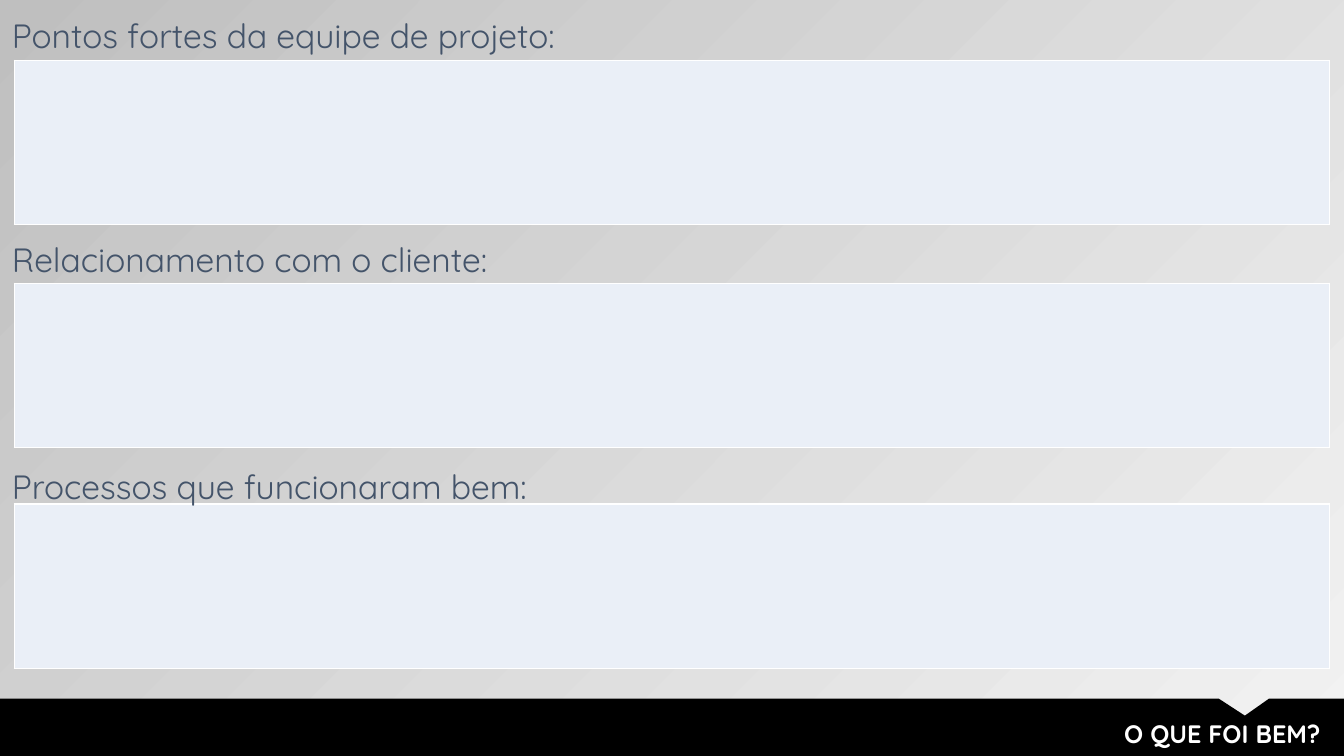
from lxml import etree
from pptx import Presentation
from pptx.dml.color import RGBColor
from pptx.enum.text import MSO_ANCHOR, MSO_AUTO_SIZE, PP_ALIGN
from pptx.oxml.ns import qn
from pptx.util import Pt

TITLE = "O QUE FOI BEM?"
# heading, heading top, heading height, line spacing, answer box top
SECTIONS = [
    ("Pontos fortes da equipe de projeto:", 13.7, 31.7, Pt(21.5), 43.2),
    ("Relacionamento com o cliente:", 173.5, 31.7, Pt(21.5), 202.3),
    ("Processos que funcionaram bem:", 322.6, 41, 1.2, 360),
]
W, H = 960, 540
BAND_TOP = 499
NOTCH = [(870.5, BAND_TOP), (889.2, 511.2), (906.5, BAND_TOP)]
BOX_LEFT, BOX_W, BOX_H = 10.1, 939.6, 117.4
FONT = "Quicksand"
WHITE, BLACK, SLATE, PALE = "FFFFFF", "000000", "44546A", "EAEFF7"
BACKGROUND = ["F2F2F2", "BFBFBF"]


def rgb(value):
    return RGBColor.from_string(value)


def apply(obj, **values):
    for name, value in values.items():
        setattr(obj, name, value)


def write(shape, text, size, color, bold=False, **paragraph):
    tf = shape.text_frame
    apply(tf, word_wrap=True, auto_size=MSO_AUTO_SIZE.NONE,
          vertical_anchor=MSO_ANCHOR.TOP)
    p = tf.paragraphs[0]
    apply(p, **paragraph)
    r = p.add_run()
    r.text = text
    apply(r.font, name=FONT, size=Pt(size), bold=bold)
    r.font.color.rgb = rgb(color)
    return tf


def add_answer_box(s, top):
    frame = s.shapes.add_table(1, 1, Pt(BOX_LEFT), Pt(top), Pt(BOX_W), Pt(BOX_H))
    apply(frame.table, first_row=False, horz_banding=False)
    cell = frame.table.cell(0, 0)
    props = cell._tc.get_or_add_tcPr()
    for side in ("a:lnL", "a:lnR", "a:lnT", "a:lnB"):
        line = etree.SubElement(props, qn(side), w=str(Pt(1)))
        fill = etree.SubElement(line, qn("a:solidFill"))
        etree.SubElement(fill, qn("a:srgbClr"), val=WHITE)
    cell.fill.solid()
    cell.fill.fore_color.rgb = rgb(PALE)


def add_heading(s, text, top, height, spacing):
    box = s.shapes.add_textbox(0, Pt(top), Pt(549.4), Pt(height))
    tf = write(box, text, 24, SLATE, line_spacing=spacing, space_before=Pt(4.8))
    apply(tf, margin_left=Pt(8.6), margin_right=Pt(8.6),
          margin_top=Pt(4.3), margin_bottom=Pt(4.3))


def add_band(s):
    outline = NOTCH + [(W, BAND_TOP), (W, H), (0, H)]
    builder = s.shapes.build_freeform(0, Pt(BAND_TOP))
    builder.add_line_segments([(Pt(x), Pt(y)) for x, y in outline], close=True)
    band = builder.convert_to_shape()
    band.shadow.inherit = False
    band.fill.solid()
    band.fill.fore_color.rgb = rgb(BLACK)
    band.line.fill.background()
    return band


def main():
    prs = Presentation()
    apply(prs, slide_width=Pt(W), slide_height=Pt(H))
    s = prs.slides.add_slide(prs.slide_layouts[5])

    fill = s.background.fill
    fill.gradient()
    fill.gradient_angle = 135
    for stop, color in zip(fill.gradient_stops, BACKGROUND):
        stop.color.rgb = rgb(color)

    title = s.shapes.title
    apply(title, left=Pt(298.1), top=Pt(509.8), width=Pt(652.3), height=Pt(28.8))
    write(title, TITLE, 18, WHITE, bold=True, alignment=PP_ALIGN.RIGHT)
    add_band(s).element.addnext(title.element)  # title sits in front of the band

    for text, top, height, spacing, box_top in SECTIONS:
        add_answer_box(s, box_top)
        add_heading(s, text, top, height, spacing)

    prs.save("out.pptx")


if __name__ == "__main__":
    main()
